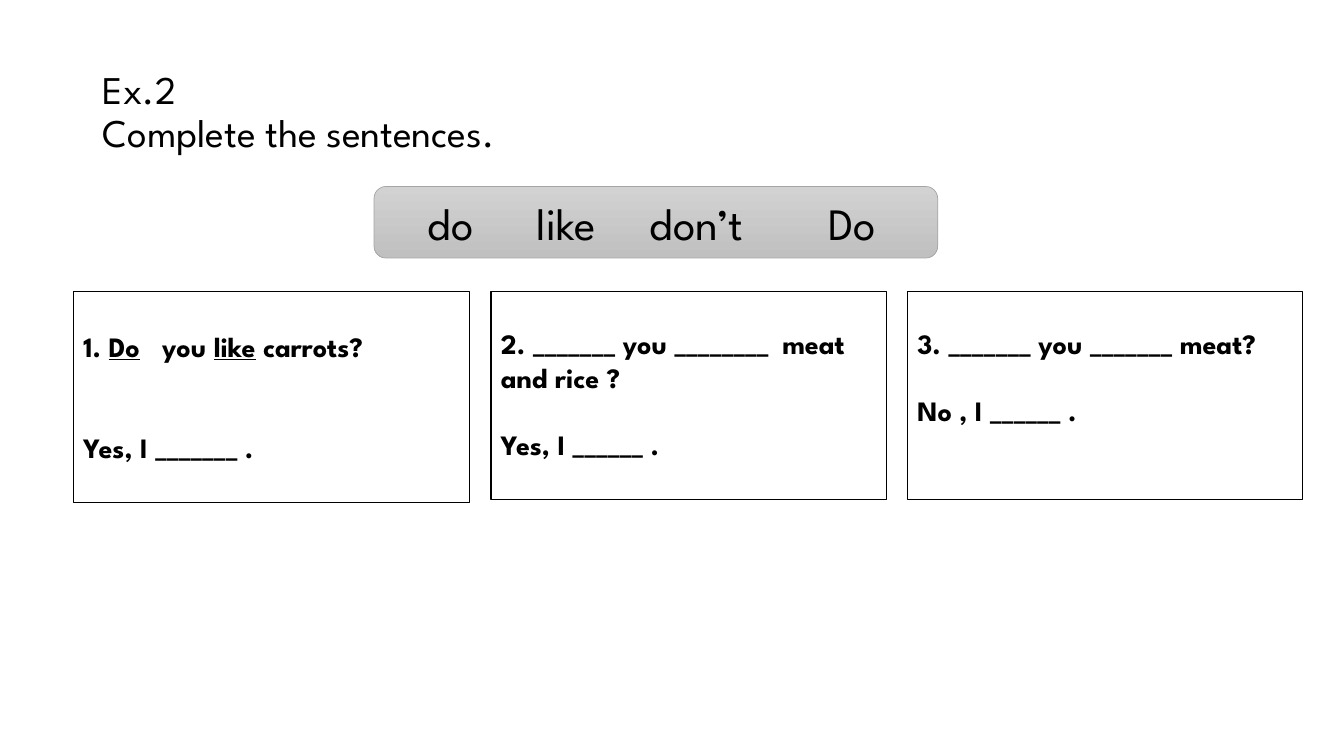
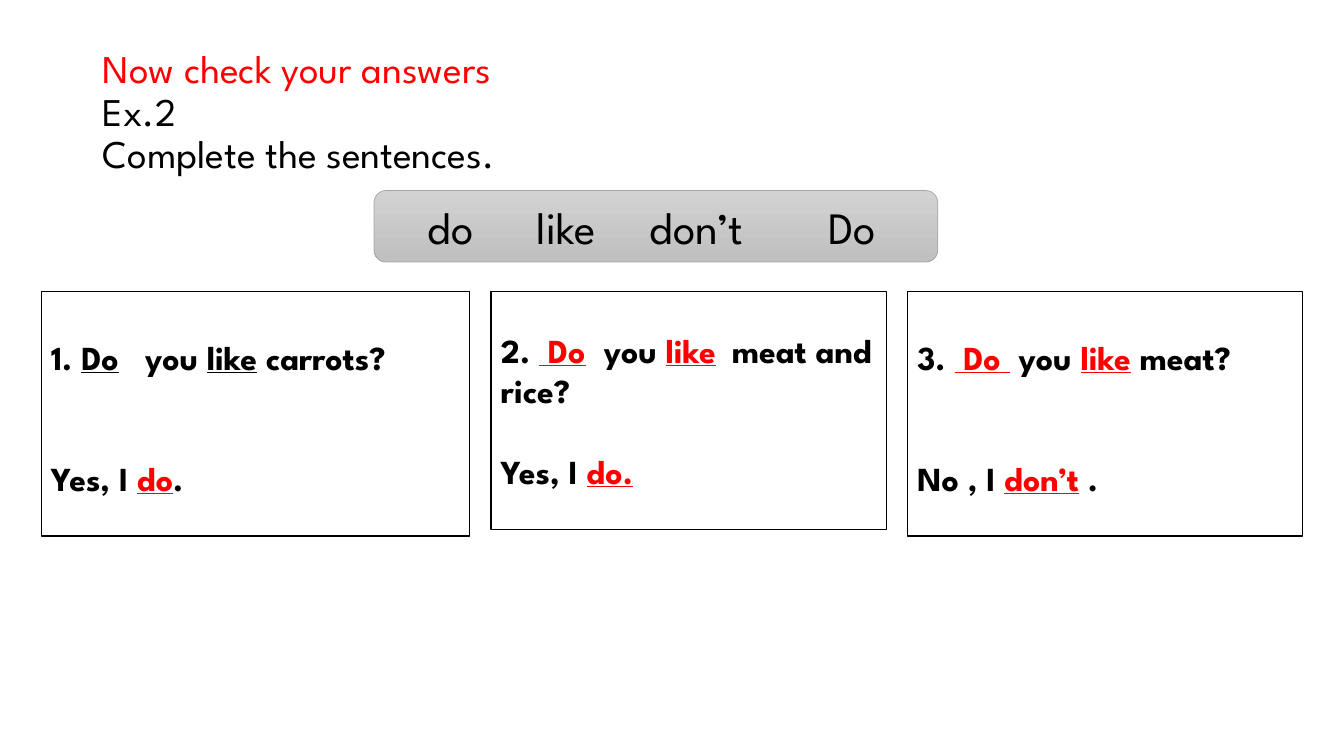
from lxml.etree import SubElement
from pptx import Presentation
from pptx.dml.color import RGBColor as Rgb
from pptx.enum.shapes import MSO_SHAPE as Shape
from pptx.enum.text import MSO_ANCHOR as Anchor, MSO_AUTO_SIZE as Fit, PP_ALIGN as Align
from pptx.oxml.ns import qn
from pptx.util import Inches, Pt

FACE = "League Spartan"
BLACK, RED, WHITE, EDGE = "000000", "FF0000", "FFFFFF", "A5A5A5"
SHADE = ("D2D2D2", "C0C0C0")
WIDE, HIGH = 13.33, 7.5
COL, GAP, TOP, LAST = 3.92, 0.21, 2.89, 12.92
WORDS = "do\tlike\tdon’t\tDo"


def paint(part, hue):
    part.rgb = Rgb.from_string(hue)


def style(para, size, bold=False, tabs=()):
    para.alignment = Align.LEFT
    if tabs:
        stops = SubElement(para._p.get_or_add_pPr(), qn("a:tabLst"))
        for stop in tabs:
            SubElement(stops, qn("a:tab"), pos=str(Inches(stop)), algn="l")
    font = para.font
    font.name, font.size, font.bold = FACE, Pt(size), bold
    paint(font.color, BLACK)


def block(slide, kind, box, edge, width):
    shape = slide.shapes.add_shape(kind, *map(Inches, box))
    shape.shadow.inherit = False
    paint(shape.line.color, edge)
    shape.line.width = Pt(width)
    shape.text_frame.word_wrap = True
    return shape


def head(slide, lines, box):
    title = slide.shapes.title
    title.left, title.top, title.width, title.height = map(Inches, box)
    frame = title.text_frame
    frame.auto_size, frame.vertical_anchor = Fit.NONE, Anchor.MIDDLE
    para = frame.paragraphs[0]
    style(para, 28)
    para.line_spacing = 0.9
    for i, (text, hue) in enumerate(lines):
        if i:
            para.add_line_break()
        run = para.add_run()
        run.text = text
        if hue != BLACK:
            paint(run.font.color, hue)


def bank(slide, box):
    bar = block(slide, Shape.ROUNDED_RECTANGLE, box, EDGE, 0.5)
    bar.fill.gradient()
    bar.fill.gradient_angle = 270
    for stop, hue in zip(bar.fill.gradient_stops, SHADE):
        paint(stop.color, hue)
    frame = bar.text_frame
    frame.margin_left, frame.vertical_anchor = Inches(0.5), Anchor.MIDDLE
    para = frame.paragraphs[0]
    style(para, 32, tabs=(1.08, 2.2, 3.97))
    para.add_run().text = WORDS


def fill(para, text, hue):
    for i, piece in enumerate(text.split("|")):
        if not piece:
            continue
        run = para.add_run()
        run.text = piece
        if i % 2:
            run.font.underline = True
            if hue != BLACK:
                paint(run.font.color, hue)


def card(slide, left, width, size, lead, skip, tabs, ask, reply, hue):
    high = 0.43 + (lead + 4 * size) / 60
    tile = block(slide, Shape.RECTANGLE, (left, TOP, width, high), BLACK, 1)
    tile.fill.solid()
    paint(tile.fill.fore_color, WHITE)
    frame = tile.text_frame
    frame.vertical_anchor = Anchor.TOP
    frame.margin_top = Inches(0.05 + lead / 60)
    first, second = frame.paragraphs[0], frame.add_paragraph()
    second.space_before = Pt(1.2 * size * skip)
    style(first, size, True, tabs)
    style(second, size, True)
    fill(first, ask, hue)
    fill(second, reply, RED)


def page(deck, lines, drop, start, size, cards):
    slide = deck.slides.add_slide(deck.slide_layouts[5])
    head(slide, lines, (0.92, 0.4, 11.5, 1.45))
    bank(slide, (3.71, drop, 5.59, 0.71))
    for i, items in enumerate(cards):
        edge = LAST - (2 - i) * (COL + GAP)
        left = edge - COL if i else start
        card(slide, left, edge - left, size, *items)


def main():
    deck = Presentation()
    deck.slide_width, deck.slide_height = Inches(WIDE), Inches(HIGH)
    task = [("Ex.2", BLACK), ("Complete the sentences.", BLACK)]
    first = "1. |Do|\tyou |like| carrots?"
    page(deck, task, 1.85, 0.73, 20, [
        (20, 2, (0.78,), first, "Yes, I _______ .", BLACK),
        (18, 1, (2.79,), "2. _______ you ________\tmeat and rice ?", "Yes, I ______ .", RED),
        (18, 1, (), "3. _______ you _______ meat?", "No , I ______ .", RED),
    ])
    page(deck, [("Now check your answers", RED)] + task, 1.89, 0.41, 24, [
        (24, 2, (0.93,), first, "Yes, I |do|.", BLACK),
        (20, 1, (1.02, 2.29), "2. | Do\t|you |like|\tmeat and rice?", "Yes, I |do.|", RED),
        (24, 2, (), "3. | Do | you |like| meat?", "No , I |don’t| .", RED),
    ])
    deck.save("out.pptx")


if __name__ == "__main__":
    main()
